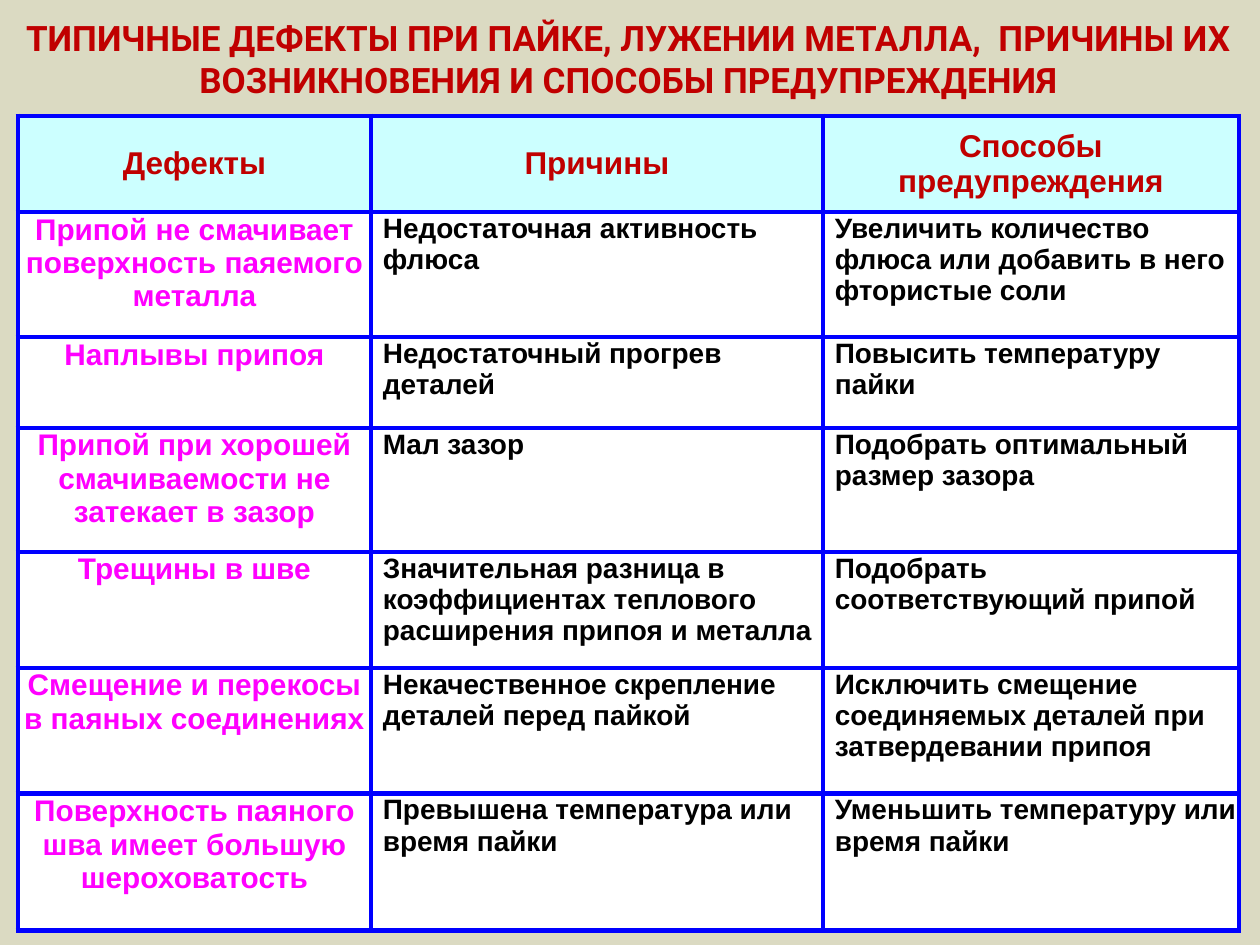
from lxml import etree
from pptx import Presentation
from pptx.dml.color import RGBColor
from pptx.enum.text import MSO_ANCHOR as Anchor, PP_ALIGN as Align
from pptx.oxml.ns import qn
from pptx.util import Pt

PX = 914400 // 126
BLUE = "0000FF"
RED = "C00000"


def paint(color_format, color):
    color_format.rgb = RGBColor.from_string(color)


def write(text_frame, text, font_name, size, color, alignment):
    text_frame.word_wrap = True
    text_frame.text = text
    for paragraph in text_frame.paragraphs:
        paragraph.alignment = alignment
        paragraph.font.name = font_name
        paragraph.font.size = Pt(size)
        paragraph.font.bold = True
        paint(paragraph.font.color, color)


presentation = Presentation()
presentation.slide_width = 1260 * PX
presentation.slide_height = 945 * PX
slide = presentation.slides.add_slide(presentation.slide_layouts[6])
slide.background.fill.solid()
paint(slide.background.fill.fore_color, "DBDAC2")

title = slide.shapes.add_textbox(0, 11 * PX, 1257 * PX, 95 * PX)
title.text_frame.vertical_anchor = Anchor.MIDDLE
write(title.text_frame,
      "ТИПИЧНЫЕ ДЕФЕКТЫ ПРИ ПАЙКЕ, ЛУЖЕНИИ МЕТАЛЛА,  ПРИЧИНЫ ИХ ВОЗНИКНОВЕНИЯ И СПОСОБЫ ПРЕДУПРЕЖДЕНИЯ",
      "Roboto", 20, RED, Align.CENTER)

rows = [
    ("Дефекты", "Причины", "Способы\nпредупреждения"),
    ("Припой не смачивает поверхность паяемого металла",
     "Недостаточная активность флюса",
     "Увеличить количество флюса или добавить в него фтористые соли"),
    ("Наплывы припоя", "Недостаточный прогрев деталей", "Повысить температуру пайки"),
    ("Припой при хорошей смачиваемости не затекает в зазор",
     "Мал зазор",
     "Подобрать оптимальный размер зазора"),
    ("Трещины в шве",
     "Значительная разница в коэффициентах теплового расширения припоя и металла",
     "Подобрать соответствующий припой"),
    ("Смещение и перекосы в паяных соединениях",
     "Некачественное скрепление деталей перед пайкой",
     "Исключить смещение соединяемых деталей при затвердевании припоя"),
    ("Поверхность паяного шва имеет большую шероховатость",
     "Превышена температура или время пайки",
     "Уменьшить температуру или время пайки"),
]
column_widths = [353, 452, 416]
row_heights = [96, 125, 91, 124, 116, 126, 137]

table = slide.shapes.add_table(
    len(rows), len(column_widths), 18 * PX, 116 * PX,
    sum(column_widths) * PX, sum(row_heights) * PX).table
table.first_row = False
table.horz_banding = False
for column, width in zip(table.columns, column_widths):
    column.width = width * PX
for row, height in zip(table.rows, row_heights):
    row.height = height * PX

for row_index, texts in enumerate(rows):
    for column_index, text in enumerate(texts):
        cell = table.cell(row_index, column_index)
        cell.margin_left = cell.margin_right = PX
        cell.margin_top = cell.margin_bottom = PX
        is_header = row_index == 0
        cell.fill.solid()
        paint(cell.fill.fore_color, "CCFFFF" if is_header else "FFFFFF")
        cell.vertical_anchor = Anchor.MIDDLE if is_header else Anchor.TOP
        if is_header:
            write(cell.text_frame, text, "Arial", 18, RED, Align.CENTER)
        elif column_index == 0:
            write(cell.text_frame, text, "Arial", 17, "FF00FF", Align.CENTER)
        else:
            write(cell.text_frame, text, "Arial", 16, "000000", Align.LEFT)
            properties = cell.text_frame.paragraphs[0]._p.get_or_add_pPr()
            properties.set("marL", str(11 * PX))
            properties.set("indent", "0")
        cell_properties = cell._tc.get_or_add_tcPr()
        for position, side in enumerate(("lnL", "lnR", "lnT", "lnB")):
            border = etree.Element(qn(f"a:{side}"), w=str(Pt(3)))
            border_fill = etree.SubElement(border, qn("a:solidFill"))
            etree.SubElement(border_fill, qn("a:srgbClr"), val=BLUE)
            cell_properties.insert(position, border)

presentation.save("out.pptx")
